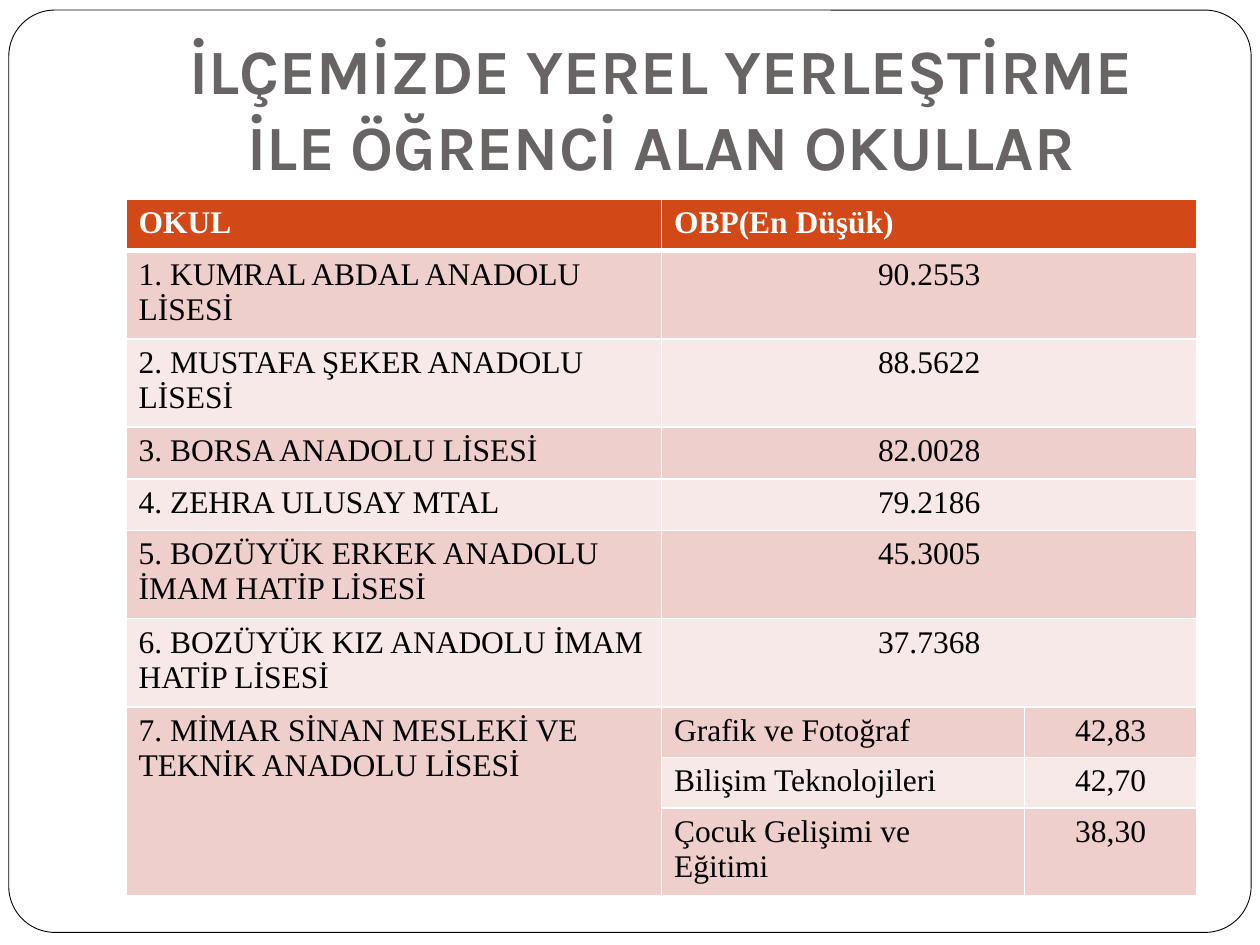
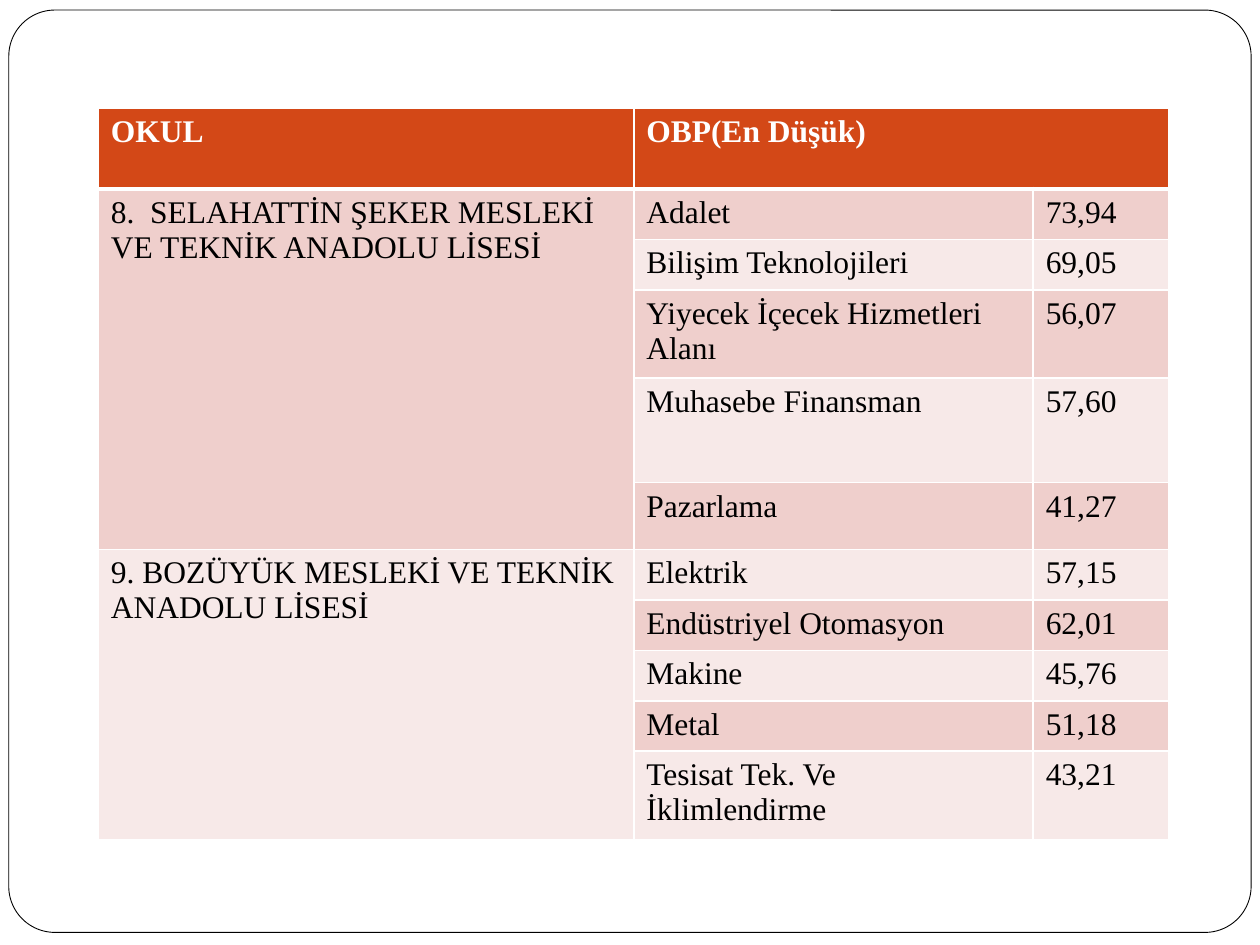
from dataclasses import dataclass

from lxml.etree import SubElement
from pptx import Presentation
from pptx.dml.color import RGBColor as Rgb
from pptx.enum.shapes import MSO_SHAPE as Preset
from pptx.enum.text import MSO_ANCHOR as Anchor, PP_ALIGN as Align
from pptx.oxml.ns import qn
from pptx.util import Inches, Pt


@dataclass(frozen=True)
class Theme:
    """Colours, fonts and sizes shared by the slides."""

    title_font: str = "Karla"
    table_font: str = "Times New Roman"
    title_size: int = 36
    table_size: int = 18
    title: str = "696464"
    header: str = "D34817"
    bands: tuple = ("EFCFCC", "F7E9E8")
    white: str = "FFFFFF"
    black: str = "000000"
    frame_line: float = 0.5
    grid_line: int = 1
    header_line: int = 3


THEME = Theme()
HEADINGS = ("OKUL", "OBP(En Düşük)")
SINGLE_LINE, DOUBLE_LINE, BRANCH_LINE = 0.41, 0.65, 0.38

LOCAL_SCHOOLS = [
    ("1. KUMRAL ABDAL ANADOLU LİSESİ", "90.2553"),
    ("2. MUSTAFA ŞEKER ANADOLU LİSESİ", "88.5622"),
    ("3. BORSA ANADOLU LİSESİ", "82.0028"),
    ("4. ZEHRA ULUSAY MTAL", "79.2186"),
    ("5. BOZÜYÜK ERKEK ANADOLU İMAM HATİP LİSESİ", "45.3005"),
    ("6. BOZÜYÜK KIZ ANADOLU İMAM HATİP LİSESİ", "37.7368"),
    ("7. MİMAR SİNAN MESLEKİ VE TEKNİK ANADOLU LİSESİ", [
        ("Grafik ve Fotoğraf", "42,83"),
        ("Bilişim Teknolojileri", "42,70"),
        ("Çocuk Gelişimi ve Eğitimi", "38,30"),
    ]),
]
LOCAL_HEIGHTS = [
    SINGLE_LINE, DOUBLE_LINE, DOUBLE_LINE, SINGLE_LINE, SINGLE_LINE,
    DOUBLE_LINE, DOUBLE_LINE, BRANCH_LINE, BRANCH_LINE, DOUBLE_LINE,
]

VOCATIONAL_SCHOOLS = [
    ("8.  SELAHATTİN ŞEKER MESLEKİ VE TEKNİK ANADOLU LİSESİ", [
        ("Adalet", "73,94"),
        ("Bilişim Teknolojileri", "69,05"),
        ("Yiyecek İçecek Hizmetleri Alanı", "56,07"),
        ("Muhasebe Finansman", "57,60"),
        ("Pazarlama", "41,27"),
    ]),
    ("9. BOZÜYÜK MESLEKİ VE TEKNİK ANADOLU LİSESİ", [
        ("Elektrik", "57,15"),
        ("Endüstriyel Otomasyon", "62,01"),
        ("Makine", "45,76"),
        ("Metal", "51,18"),
        ("Tesisat Tek. Ve İklimlendirme", "43,21"),
    ]),
]
VOCATIONAL_HEIGHTS = [
    0.64, BRANCH_LINE, BRANCH_LINE, DOUBLE_LINE, 0.83, 0.53,
    *[BRANCH_LINE] * 4, DOUBLE_LINE,
]


def set_text(paragraph, text, font_name, size, color, bold=False, align=Align.LEFT):
    """Write one uniformly styled paragraph."""
    paragraph.text = text
    paragraph.alignment = align
    font = paragraph.font
    font.name, font.size, font.bold = font_name, Pt(size), bold
    font.color.rgb = Rgb.from_string(color)


def add_framed_slide(presentation):
    """Add a blank slide with the rounded frame."""
    slide = presentation.slides.add_slide(presentation.slide_layouts[6])
    frame = slide.shapes.add_shape(
        Preset.ROUNDED_RECTANGLE, Inches(0.07), Inches(0.08), Inches(9.86), Inches(7.32)
    )
    frame.adjustments[0] = 0.05
    frame.shadow.inherit = False
    frame.fill.solid()
    frame.fill.fore_color.rgb = Rgb.from_string(THEME.white)
    frame.line.color.rgb = Rgb.from_string(THEME.black)
    frame.line.width = Pt(THEME.frame_line)
    return slide


def add_title(slide, text):
    """Add the centred slide title."""
    box = slide.shapes.add_textbox(Inches(1), Inches(0.3), Inches(8.5), Inches(1.25))
    frame = box.text_frame
    frame.word_wrap = True
    frame.vertical_anchor = Anchor.BOTTOM
    frame.margin_bottom = Inches(0.1)
    set_text(frame.paragraphs[0], text, THEME.title_font, THEME.title_size,
             THEME.title, bold=True, align=Align.CENTER)


def style_cell(cell, fill, top, bottom):
    """Give a cell its white borders and its fill."""
    properties = cell._tc.get_or_add_tcPr()
    widths = {"lnL": THEME.grid_line, "lnR": THEME.grid_line, "lnT": top, "lnB": bottom}
    for side, width in widths.items():
        line = SubElement(properties, qn(f"a:{side}"), w=str(Pt(width)))
        solid = SubElement(line, qn("a:solidFill"))
        SubElement(solid, qn("a:srgbClr"), val=THEME.white)
    cell.fill.solid()
    cell.fill.fore_color.rgb = Rgb.from_string(fill)


def style_rows(table):
    """Colour the header and the alternating body bands."""
    for index, row in enumerate(table.rows):
        fill = THEME.bands[(index - 1) % 2] if index else THEME.header
        top = THEME.header_line if index == 1 else THEME.grid_line
        bottom = THEME.grid_line if index else THEME.header_line
        for cell in row.cells:
            style_cell(cell, fill, top, bottom)


def write_cell(cell, text, align=Align.LEFT, header=False):
    """Write header or body text in a cell."""
    color = THEME.white if header else THEME.black
    set_text(cell.text_frame.paragraphs[0], text, THEME.table_font,
             THEME.table_size, color, bold=header, align=align)


def add_school_table(slide, left, top, widths, heights, schools, score_align):
    """Add a table of schools with one score or a score per branch."""
    table = slide.shapes.add_table(
        len(heights), len(widths), Inches(left), Inches(top),
        Inches(sum(widths)), Inches(sum(heights)),
    ).table
    for column, width in zip(table.columns, widths):
        column.width = Inches(width)
    for row, height in zip(table.rows, heights):
        row.height = Inches(height)
    style_rows(table)

    table.cell(0, 1).merge(table.cell(0, 2))
    for column, heading in enumerate(HEADINGS):
        write_cell(table.cell(0, column), heading, header=True)

    row = 1
    for school, scores in schools:
        write_cell(table.cell(row, 0), school)
        if isinstance(scores, str):
            table.cell(row, 1).merge(table.cell(row, 2))
            write_cell(table.cell(row, 1), scores, score_align)
            row += 1
            continue
        table.cell(row, 0).merge(table.cell(row + len(scores) - 1, 0))
        for branch, score in scores:
            write_cell(table.cell(row, 1), branch)
            write_cell(table.cell(row, 2), score, score_align)
            row += 1


def main():
    """Build and save the two slides."""
    presentation = Presentation()
    presentation.slide_width = Inches(10)
    presentation.slide_height = Inches(7.5)

    slide = add_framed_slide(presentation)
    add_title(slide, "İLÇEMİZDE YEREL YERLEŞTİRME İLE ÖĞRENCİ ALAN OKULLAR")
    add_school_table(slide, 1, 1.58, (4.25, 2.88, 1.37), LOCAL_HEIGHTS,
                     LOCAL_SCHOOLS, Align.CENTER)

    slide = add_framed_slide(presentation)
    add_school_table(slide, 0.78, 0.86, (4.25, 3.17, 1.08), VOCATIONAL_HEIGHTS,
                     VOCATIONAL_SCHOOLS, Align.LEFT)

    presentation.save("out.pptx")


if __name__ == "__main__":
    main()
